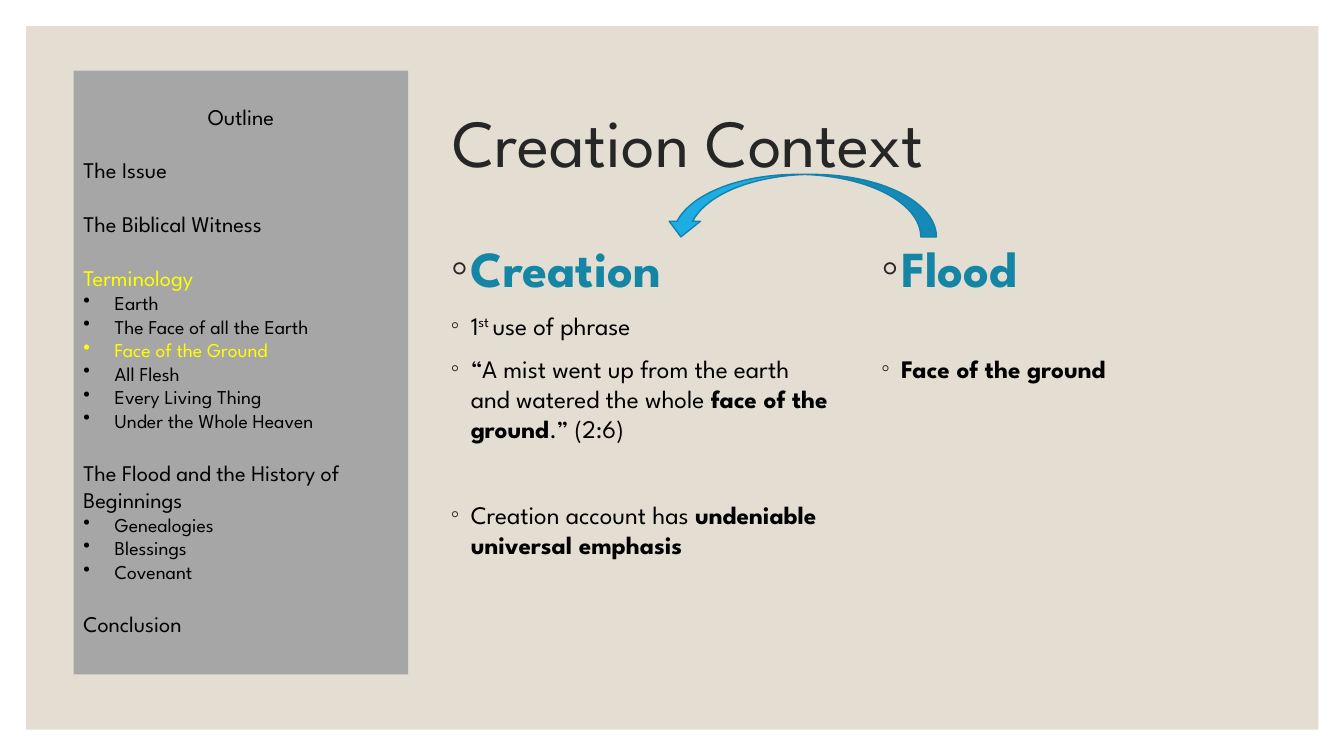
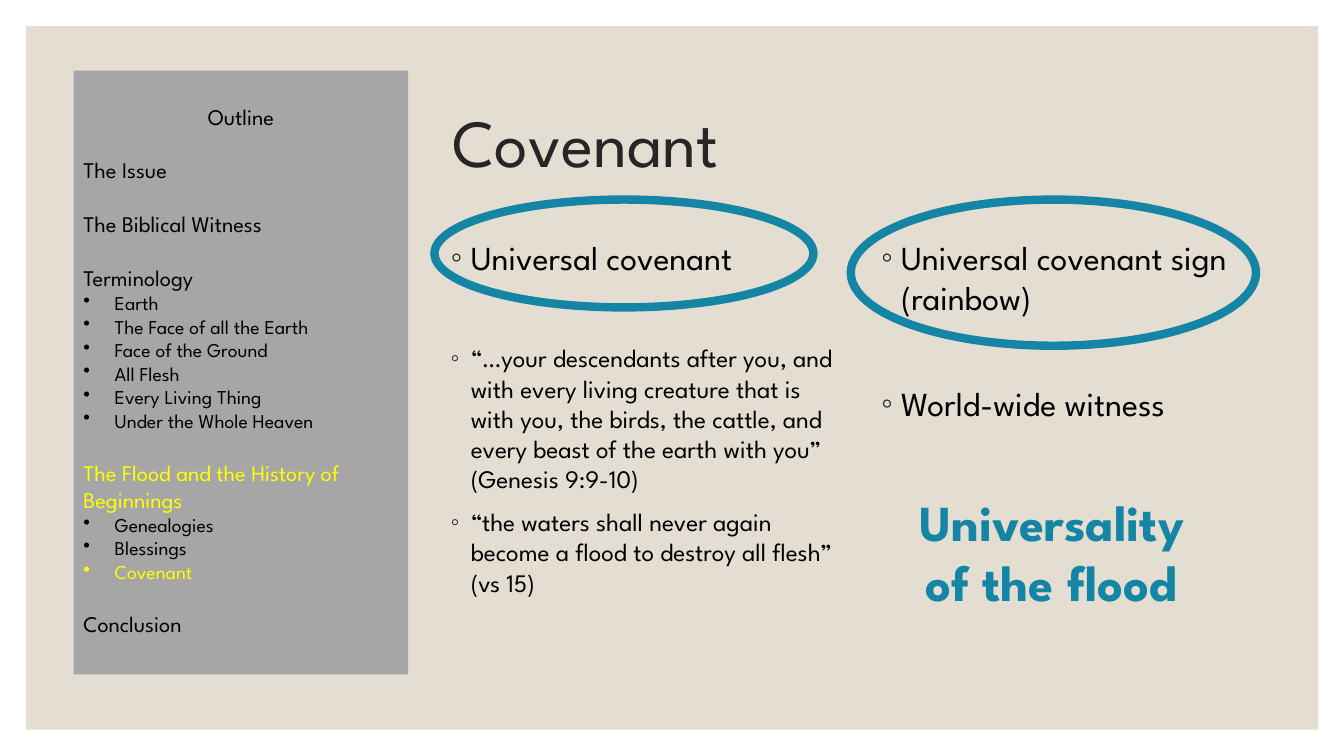
import dataclasses

import pptx
import pptx.dml.color
import pptx.enum.shapes
import pptx.enum.text
import pptx.oxml
import pptx.oxml.ns
import pptx.util

SHAPE = pptx.enum.shapes.MSO_SHAPE
ALIGN = pptx.enum.text.PP_ALIGN
ANCHOR = pptx.enum.text.MSO_ANCHOR


@dataclasses.dataclass(frozen=True)
class Theme:
    font: str = "League Spartan"
    panel: str = "E3DED1"
    sidebar: str = "A6A6A6"
    title: str = "262626"
    ink: str = "000000"
    accent: str = "1485A4"
    active: str = "FFFF00"
    arrow: str = "1CADE4"
    arrow_edge: str = "1580A9"
    title_size: int = 48
    heading_size: int = 36
    large_size: int = 24
    text_size: int = 18
    section_size: int = 16
    item_size: int = 14
    list_gap: int = 9
    line_height: float = 1.2
    ring_width: int = 6


THEME = Theme()


@dataclasses.dataclass(frozen=True)
class Box:
    column: float
    row: float
    columns: float
    rows: float

    def lengths(self):
        return [pptx.util.Inches(cells / 10) for cells in
                (self.column, self.row, self.columns, self.rows)]

    def inner(self, column, row, columns, rows):
        return Box(self.column + column, self.row + row, columns, rows)


PAGE = Box(0, 0, 133.33, 75)
PANEL = PAGE.inner(2.6, 2.6, 128.2, 69.8)
SIDEBAR = PAGE.inner(7.3, 7, 33.2, 59.9)
CONTENT = PAGE.inner(43.7, 7, 82.8, 57)
TITLE = CONTENT.inner(0.2, 0, 77.7, 15)
LEFT, RIGHT = [CONTENT.inner(place * 42.7, 16, 40, 41) for place in range(2)]

OUTLINE = [
    ("The Issue", []),
    ("The Biblical Witness", []),
    ("Terminology", ["Earth", "The Face of all the Earth", "Face of the Ground",
                     "All Flesh", "Every Living Thing", "Under the Whole Heaven"]),
    ("The Flood and the History of Beginnings",
     ["Genealogies", "Blessings", "Covenant"]),
    ("Conclusion", []),
]


@dataclasses.dataclass(frozen=True)
class Span:
    text: str
    bold: bool = False
    raised: bool = False


@dataclasses.dataclass(frozen=True)
class Entry:
    spans: tuple
    size: int = THEME.text_size
    color: str = THEME.ink
    skipped_size: int = 0


def rgb(value):
    return pptx.dml.color.RGBColor.from_string(value)


def place(item, box):
    item.left, item.top, item.width, item.height = box.lengths()


def add_span(para, text, size, color, bold=False, raised=False):
    span = para.add_run()
    span.text = text
    span.font.name = THEME.font
    span.font.size = pptx.util.Pt(size)
    span.font.bold = bold
    span.font.color.rgb = rgb(color)
    if raised:
        span.font._element.set("baseline", "30000")


def next_para(frame, before=0, align=ALIGN.LEFT):
    para = frame.paragraphs[0]
    if para.runs:
        para = frame.add_paragraph()
    para.alignment = align
    para.space_before = pptx.util.Pt(before)
    para.space_after = pptx.util.Pt(0)
    return para


def add_bullet(para, mark, indent, color=None):
    properties = para._p.get_or_add_pPr()
    properties.set("marL", str(pptx.util.Inches(indent)))
    properties.set("indent", str(-pptx.util.Inches(indent)))
    namespace = pptx.oxml.ns.nsdecls("a")
    if color:
        properties.append(pptx.oxml.parse_xml(
            f'<a:buClr {namespace}><a:srgbClr val="{color}"/></a:buClr>'))
    properties.append(pptx.oxml.parse_xml(
        f'<a:buChar {namespace} char="{mark}"/>'))


def add_figure(page, kind, box, fill=None, line=None, width=1):
    figure = page.shapes.add_shape(kind, *box.lengths())
    figure.shadow.inherit = False
    if fill:
        figure.fill.solid()
        figure.fill.fore_color.rgb = rgb(fill)
    else:
        figure.fill.background()
    if line:
        figure.line.color.rgb = rgb(line)
        figure.line.width = pptx.util.Pt(width)
    else:
        figure.line.fill.background()
    return figure


def prepare_layout(layout, page):
    for holder, box in zip(layout.placeholders, (TITLE, LEFT, RIGHT)):
        place(holder, box)
    panel = add_figure(page, SHAPE.RECTANGLE, PANEL, THEME.panel)
    panel.element.nvSpPr.cNvPr.set("id", "99")
    layout.shapes.element.insert(2, panel.element)


def fill_title(holder, box, text):
    place(holder, box)
    frame = holder.text_frame
    frame.vertical_anchor = ANCHOR.MIDDLE
    para = next_para(frame)
    para.line_spacing = 0.9
    add_span(para, text, THEME.title_size, THEME.title)


def fill_list(holder, box, entries):
    place(holder, box)
    frame = holder.text_frame
    frame.auto_size = pptx.enum.text.MSO_AUTO_SIZE.NONE
    for entry in entries:
        before = THEME.list_gap
        if entry.skipped_size:
            before += THEME.list_gap + entry.skipped_size * THEME.line_height
        para = next_para(frame, before)
        add_bullet(para, "◦", 0.2, THEME.title)
        for span in entry.spans:
            add_span(para, span.text, entry.size, entry.color,
                     span.bold, span.raised)


def add_sidebar(page, box, active):
    frame = add_figure(page, SHAPE.RECTANGLE, box, THEME.sidebar).text_frame
    frame.word_wrap = True
    frame.vertical_anchor = ANCHOR.TOP
    frame.margin_top = pptx.util.Inches(0.32)
    add_span(next_para(frame, align=ALIGN.CENTER), "Outline",
             THEME.section_size, THEME.ink)
    gap = THEME.section_size * THEME.line_height
    for section, items in OUTLINE:
        color = THEME.active if section in active else THEME.ink
        add_span(next_para(frame, gap), section, THEME.section_size, color)
        for item in items:
            para = next_para(frame)
            add_bullet(para, "•", 0.31)
            color = THEME.active if item in active else THEME.ink
            add_span(para, item, THEME.item_size, color)


def build_page(page, title, left, right, active):
    title_holder, left_holder, right_holder = page.placeholders
    fill_title(title_holder, TITLE, title)
    fill_list(left_holder, LEFT, left)
    fill_list(right_holder, RIGHT, right)
    add_sidebar(page, SIDEBAR, active)


def heading(text):
    return Entry((Span(text, bold=True),), THEME.heading_size, THEME.accent)


def build_creation(page):
    left = [
        heading("Creation"),
        Entry((Span("1"), Span("st ", raised=True), Span("use of phrase"))),
        Entry((Span("“A mist went up from the earth and watered the whole "),
               Span("face of the ground", bold=True), Span(".” (2:6)"))),
        Entry((Span("Creation account has "),
               Span("undeniable universal emphasis", bold=True)),
              skipped_size=THEME.text_size),
    ]
    right = [
        heading("Flood"),
        Entry((Span("Face of the ground", bold=True),),
              skipped_size=THEME.text_size),
    ]
    build_page(page, "Creation Context", left, right,
               {"Terminology", "Face of the Ground"})
    arrow = add_figure(page, SHAPE.CURVED_DOWN_ARROW,
                       CONTENT.inner(22.3, 10.3, 26.9, 6.2),
                       THEME.arrow, THEME.arrow_edge)
    arrow.element.spPr.get_or_add_xfrm().set("flipH", "1")


def add_conclusion(page, box, text):
    frame = page.shapes.add_textbox(*box.lengths()).text_frame
    frame.word_wrap = True
    add_span(next_para(frame, align=ALIGN.CENTER), text,
             THEME.heading_size, THEME.accent, bold=True)


def build_covenant(page):
    left = [
        Entry((Span("Universal covenant"),), THEME.large_size),
        Entry((Span("“…your descendants after you, and with every living "
                    "creature that is with you, the birds, the cattle, and "
                    "every beast of the earth with you” (Genesis 9:9-10)"),),
              skipped_size=THEME.large_size),
        Entry((Span("“the waters shall never again become a flood to destroy "
                    "all flesh” (vs 15)"),)),
    ]
    right = [
        Entry((Span("Universal covenant sign (rainbow)"),), THEME.large_size),
        Entry((Span("World-wide witness"),), THEME.large_size,
              skipped_size=THEME.large_size),
    ]
    build_page(page, "Covenant", left, right,
               {"The Flood and the History of Beginnings", "Covenant"})
    add_conclusion(page, RIGHT.inner(2.2, 25.2, 31.5, 13.1),
                   "Universality of the flood")
    for ring in (LEFT.inner(-0.6, -3.2, 37.6, 10.7),
                 RIGHT.inner(-2, -3.2, 40.2, 14.5)):
        add_figure(page, SHAPE.OVAL, ring, line=THEME.accent,
                   width=THEME.ring_width)


def main():
    deck = pptx.Presentation()
    deck.slide_width, deck.slide_height = PAGE.lengths()[2:]
    layout = deck.slide_layouts[3]
    creation, covenant = [deck.slides.add_slide(layout) for _ in range(2)]
    prepare_layout(layout, creation)
    build_creation(creation)
    build_covenant(covenant)
    deck.save("out.pptx")


if __name__ == "__main__":
    main()
